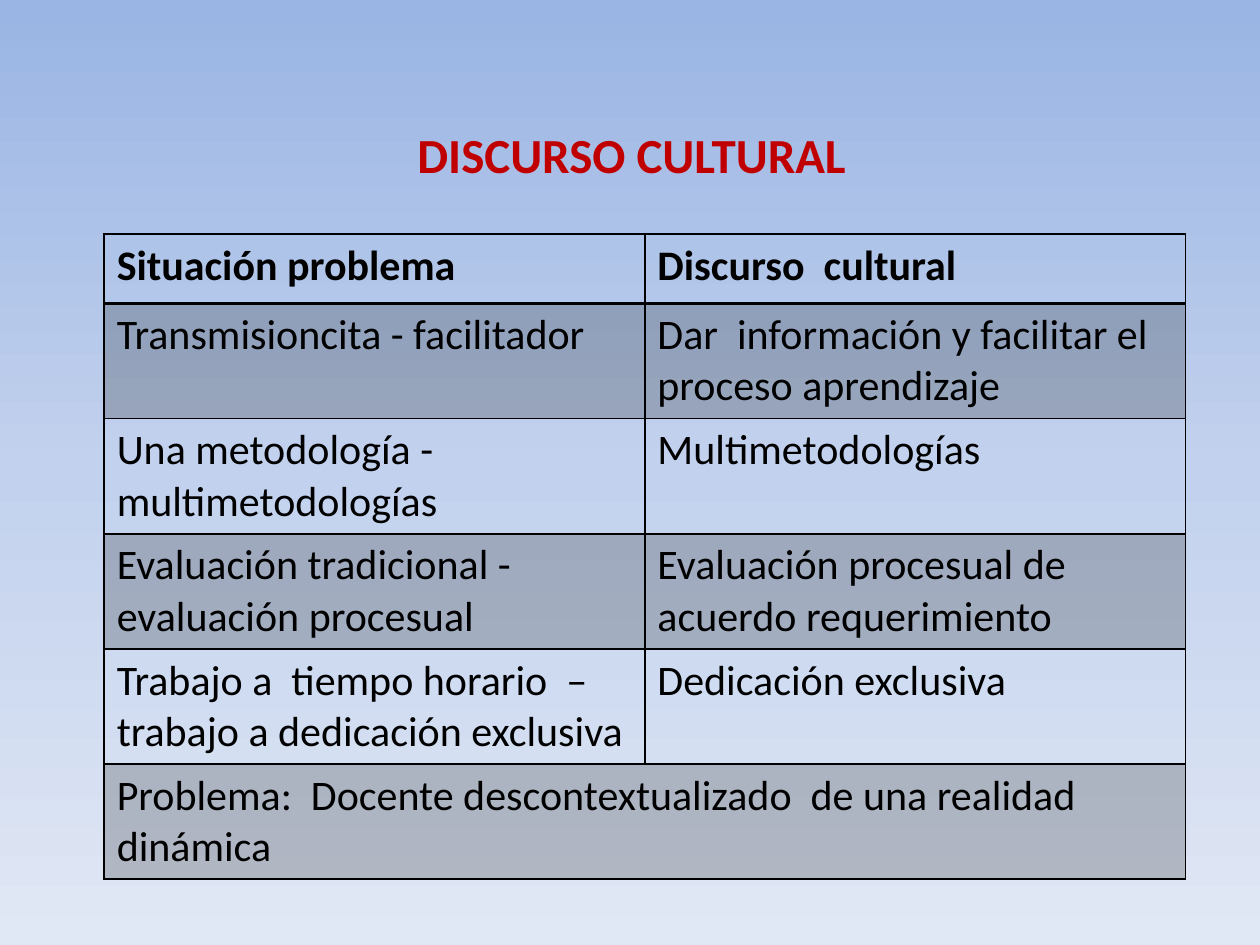
"""Build the cultural discourse slide with its comparison table."""
from copy import deepcopy
from dataclasses import dataclass

from lxml import etree
from pptx import Presentation
from pptx.dml.color import RGBColor
from pptx.enum.text import MSO_ANCHOR, PP_ALIGN
from pptx.oxml.ns import qn
from pptx.slide import Slide
from pptx.table import _Cell
from pptx.util import Cm, Pt

CENTER = PP_ALIGN.CENTER
LEFT = PP_ALIGN.LEFT
MIDDLE = MSO_ANCHOR.MIDDLE


@dataclass(frozen=True)
class Theme:
    """Colours, type sizes and line widths of the slide."""
    font: str = "Calibri"
    title_color: str = "C00000"
    ink: str = "000000"
    title_size: int = 28
    body_size: int = 24
    band_opacity: int = 20
    thin: int = 1
    thick: int = 2
    gradient: tuple = ((0, "9AB5E4"), (0.5, "C2D1ED"), (1, "E1E8F5"))


@dataclass(frozen=True)
class TableRow:
    """One table row; a single text spans both columns."""
    texts: tuple[str, ...]
    height: float = 2.32
    header: bool = False
    banded: bool = False


THEME = Theme()
COLUMN_WIDTH = 10.9
ROWS = (
    TableRow(("Situación problema", "Discurso  cultural"), height=1.4, header=True),
    TableRow(("Transmisioncita - facilitador",
              "Dar  información y facilitar el proceso aprendizaje"), banded=True),
    TableRow(("Una metodología - multimetodologías", "Multimetodologías")),
    TableRow(("Evaluación tradicional -  evaluación procesual",
              "Evaluación procesual de acuerdo requerimiento"), banded=True),
    TableRow(("Trabajo a  tiempo horario  – trabajo a dedicación exclusiva",
              "Dedicación exclusiva")),
    TableRow(("Problema:  Docente descontextualizado  de una realidad dinámica",),
             banded=True),
)


def format_text(frame, text: str, size: int, color: str, bold: bool, alignment) -> None:
    """Write one formatted paragraph into a text frame."""
    paragraph = frame.paragraphs[0]
    paragraph.alignment = alignment
    run = paragraph.add_run()
    run.text = text
    values = {"name": THEME.font, "size": Pt(size), "bold": bold}
    for name, value in values.items():
        setattr(run.font, name, value)
    run.font.color.rgb = RGBColor.from_string(color)


def paint_background(slide: Slide) -> None:
    """Fill the slide with the vertical three-stop gradient."""
    fill = slide.background.fill
    fill.gradient()
    fill.gradient_angle = 270
    stop_list = slide._element.find(".//" + qn("a:gsLst"))
    stop_list.append(deepcopy(stop_list[-1]))
    for stop, (position, color) in zip(fill.gradient_stops, THEME.gradient):
        stop.position = position
        stop.color.rgb = RGBColor.from_string(color)


def add_title(slide: Slide, text: str) -> None:
    """Place and format the slide title."""
    title = slide.shapes.title
    box = {"left": Cm(1.3), "top": Cm(1.52), "width": Cm(22.86), "height": Cm(3.18)}
    for name, value in box.items():
        setattr(title, name, value)
    title.text_frame.vertical_anchor = MIDDLE
    format_text(title.text_frame, text, THEME.title_size, THEME.title_color, True, CENTER)


def draw_borders(cell: _Cell, widths: dict[str, int]) -> None:
    """Draw the cell's edges with the given widths in points."""
    properties = cell._tc.get_or_add_tcPr()
    for edge, width in widths.items():
        line = etree.SubElement(properties, qn(f"a:{edge}"), w=str(Pt(width)))
        solid = etree.SubElement(line, qn("a:solidFill"))
        etree.SubElement(solid, qn("a:srgbClr"), val=THEME.ink)


def fill_cell(cell: _Cell, banded: bool) -> None:
    """Give the cell a translucent band or no fill."""
    if not banded:
        cell.fill.background()
        return
    cell.fill.solid()
    cell.fill.fore_color.rgb = RGBColor.from_string(THEME.ink)
    color = cell._tc.tcPr.find(f"{qn('a:solidFill')}/{qn('a:srgbClr')}")
    etree.SubElement(color, qn("a:alpha"), val=str(THEME.band_opacity * 1000))


def add_table(slide: Slide, rows: tuple[TableRow, ...]) -> None:
    """Add the comparison table."""
    column_count = max(len(row.texts) for row in rows)
    height = sum(row.height for row in rows)
    table = slide.shapes.add_table(len(rows), column_count, Cm(2.1), Cm(4.72),
                                   Cm(COLUMN_WIDTH * column_count), Cm(height)).table
    for column in table.columns:
        column.width = Cm(COLUMN_WIDTH)
    for index, row in enumerate(rows):
        table.rows[index].height = Cm(row.height)
        widths = dict.fromkeys(("lnL", "lnR", "lnT", "lnB"), THEME.thin)
        if row.header:
            widths["lnB"] = THEME.thick
        elif rows[index - 1].header:
            widths["lnT"] = THEME.thick
        for cell in table.rows[index].cells:
            draw_borders(cell, widths)
            fill_cell(cell, row.banded)
        if len(row.texts) < column_count:
            table.cell(index, 0).merge(table.cell(index, column_count - 1))
        for column, text in enumerate(row.texts):
            format_text(table.cell(index, column).text_frame, text,
                        THEME.body_size, THEME.ink, row.header, LEFT)


def main() -> None:
    """Build and save the presentation."""
    presentation = Presentation()
    presentation.slide_width = Cm(25.4)
    presentation.slide_height = Cm(19.05)
    slide = presentation.slides.add_slide(presentation.slide_layouts[5])
    paint_background(slide)
    add_title(slide, "DISCURSO CULTURAL")
    add_table(slide, ROWS)
    presentation.save("out.pptx")


if __name__ == "__main__":
    main()
